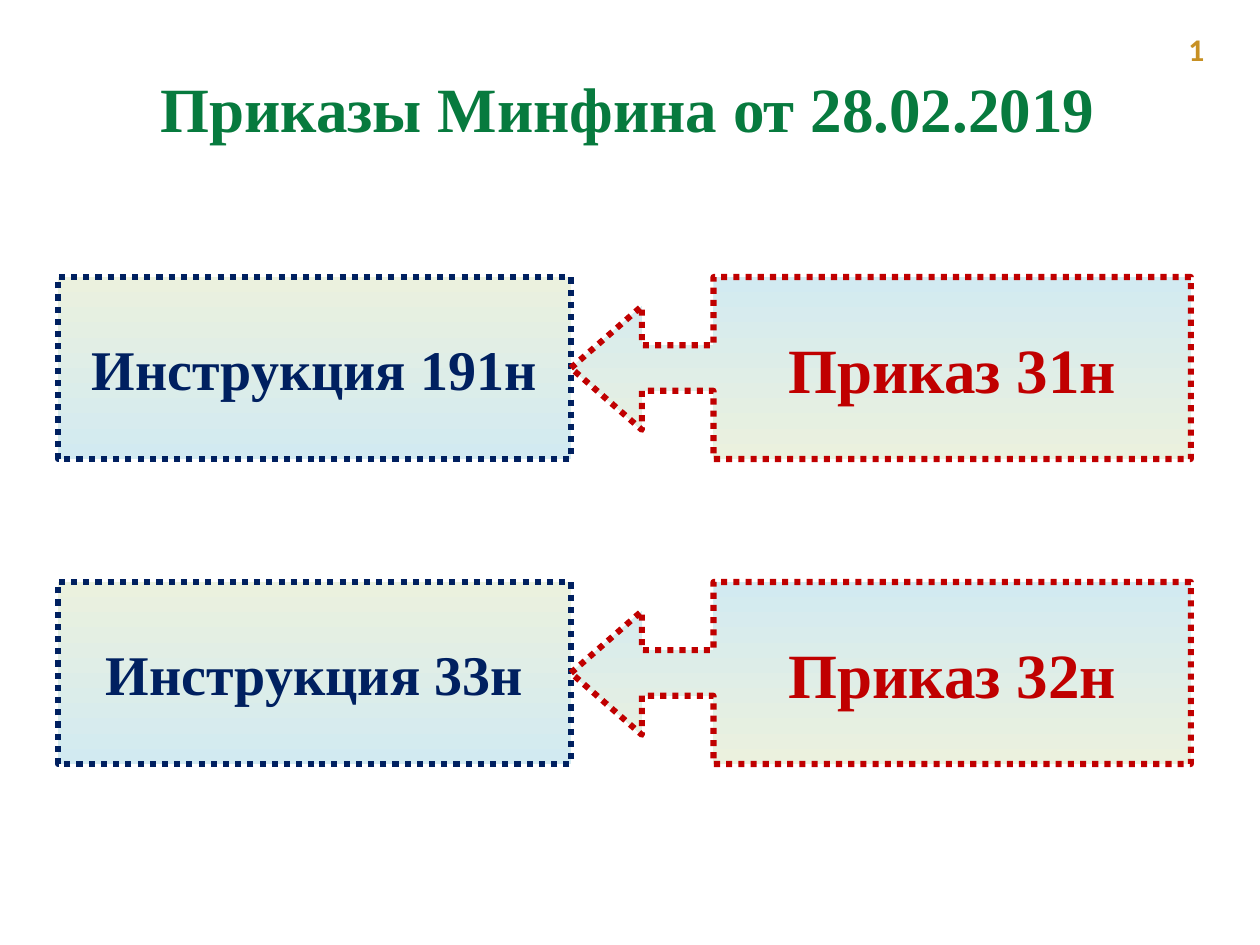
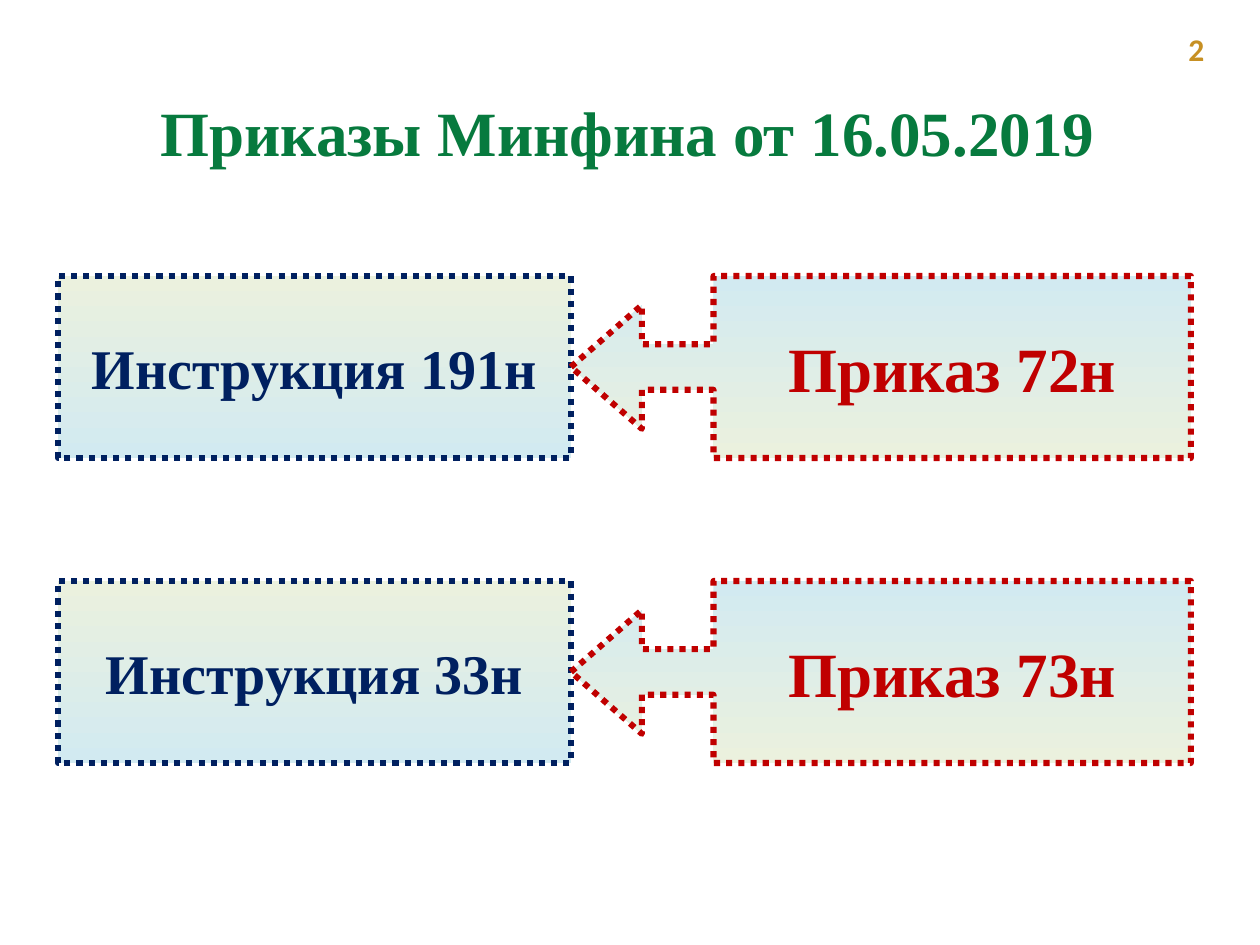
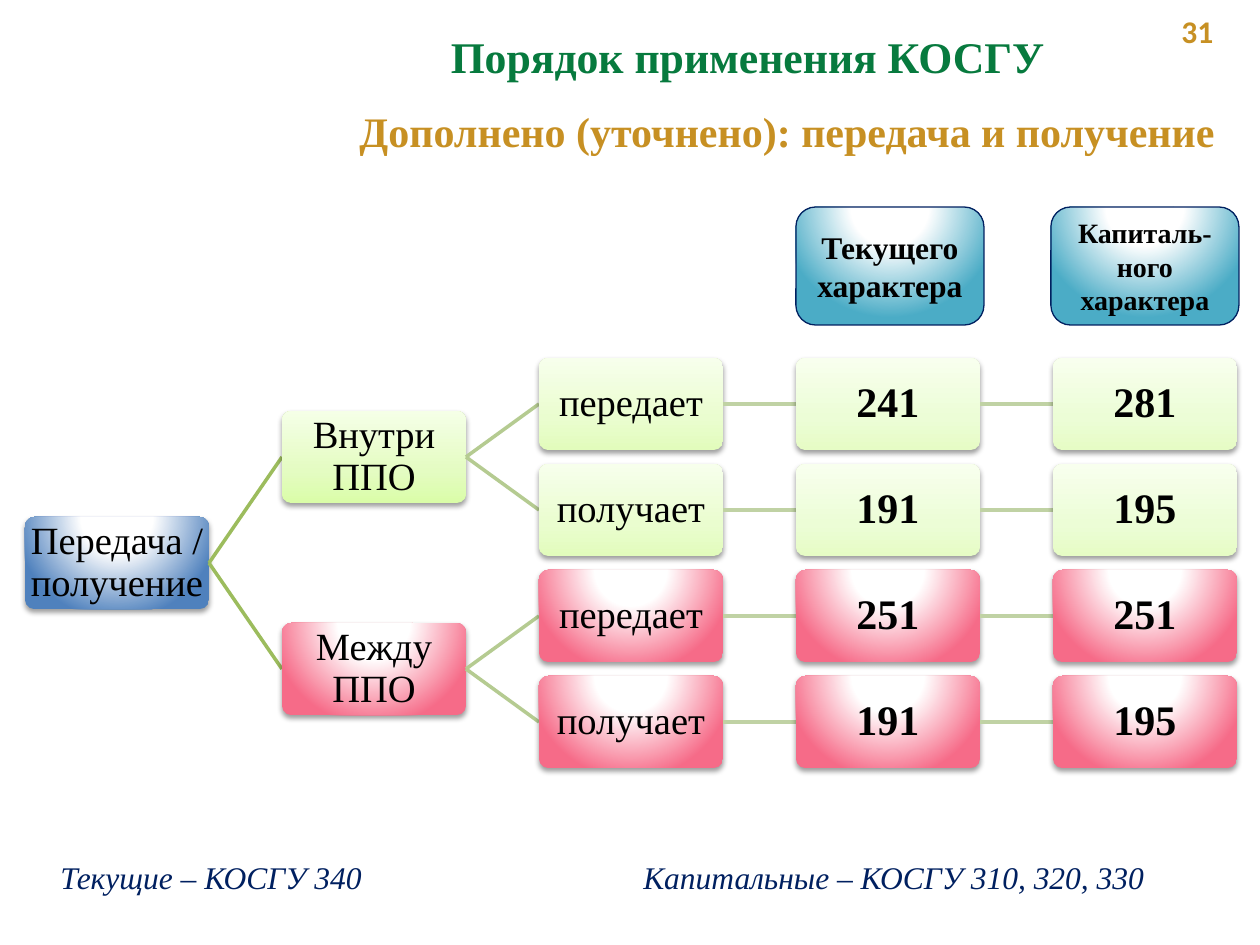
from pptx import Presentation
from pptx.dml.color import RGBColor
from pptx.enum.dml import MSO_LINE
from pptx.enum.shapes import MSO_CONNECTOR, MSO_SHAPE
from pptx.enum.text import MSO_ANCHOR, PP_ALIGN
from pptx.oxml import parse_xml
from pptx.oxml.ns import nsdecls, qn
from pptx.util import Inches, Pt

PX = 914400 // 126
rgb = RGBColor.from_string

GREEN, GOLD, NAVY, RED, BLACK = "077A3E", "C79023", "002060", "C00000", "000000"
SERIF = {"name": "Times New Roman", "bold": True}
PLAIN = {"name": "Times New Roman"}
ITALIC = {"name": "Times New Roman", "italic": True}
NUMBER = {"name": "Calibri", "bold": True}
CENTER, LEFT = PP_ALIGN.CENTER, PP_ALIGN.LEFT
MIDDLE, TOP = MSO_ANCHOR.MIDDLE, MSO_ANCHOR.TOP
PALE = ("D2EAF1", "EBF1DE")


def put_text(s, box, text, size, color, font, align=CENTER, anchor=MIDDLE, preset=None):
    """Add a text box, or a preset shape, holding one paragraph."""
    box = [v * PX for v in box]
    sp = s.shapes.add_shape(preset, *box) if preset else s.shapes.add_textbox(*box)
    tf = sp.text_frame
    tf.word_wrap = True
    tf.vertical_anchor = anchor
    p = tf.paragraphs[0]
    p.alignment = align
    r = p.add_run()
    r.text = text
    for key, value in {**font, "size": Pt(size)}.items():
        setattr(r.font, key, value)
    r.font.color.rgb = rgb(color)
    return sp


def set_gradient(sp, colors, angle=None):
    """Fill with a linear gradient, or a glow from above when there is no angle."""
    sp.shadow.inherit = False
    sp.fill.gradient()
    old = sp._element.spPr.find(qn("a:gradFill"))
    places = (0, 100) if len(colors) == 2 else (0, 35, 100)
    stops = "".join(f'<a:gs pos="{at * 1000}"><a:srgbClr val="{c}"/></a:gs>'
                    for at, c in zip(places, colors))
    if angle is None:
        way = ('<a:path path="circle"><a:fillToRect l="50000" t="-80000" '
               'r="50000" b="180000"/></a:path>')
    else:
        way = f'<a:lin ang="{angle * 60000}" scaled="0"/>'
    new = parse_xml(f'<a:gradFill {nsdecls("a")} rotWithShape="1">'
                    f'<a:gsLst>{stops}</a:gsLst>{way}</a:gradFill>')
    old.getparent().replace(old, new)


prs = Presentation()
prs.slide_width, prs.slide_height = Inches(10), Inches(7.5)
blank = prs.slide_layouts[6]

# Slides 1 and 2: orders that change instructions
order_slides = [
    ("1", "Приказы Минфина от 28.02.2019", 66, 277, ("Приказ 31н", "Приказ 32н")),
    ("2", "Приказы Минфина от 16.05.2019", 90, 276, ("Приказ 72н", "Приказ 73н")),
]
instructions = ("Инструкция 191н", "Инструкция 33н")
for number, title, title_y, top, orders in order_slides:
    s = prs.slides.add_slide(blank)
    put_text(s, (1176, 24, 74, 50), number, 18, GOLD, NUMBER, LEFT, TOP)
    for row, (instruction, order) in enumerate(zip(instructions, orders)):
        y = top + 305 * row
        target = put_text(s, (58, y, 513, 182), instruction, 32, NAVY, SERIF,
                          preset=MSO_SHAPE.RECTANGLE)
        callout = put_text(s, (571, y, 620, 182), order, 36, RED, SERIF,
                           preset=MSO_SHAPE.LEFT_ARROW_CALLOUT)
        for i, value in enumerate((0.25, 0.34, 0.39, 0.77)):
            callout.adjustments[i] = value
        for sp, color, angle in ((target, NAVY, 270), (callout, RED, 90)):
            set_gradient(sp, PALE, angle)
            sp.line.color.rgb = rgb(color)
            sp.line.width = Pt(3.5)
            sp.line.dash_style = MSO_LINE.ROUND_DOT
    put_text(s, (111, title_y, 1033, 83), title, 36, GREEN, SERIF)

# Slide 3: tree of transfers
s = prs.slides.add_slide(blank)
put_text(s, (1169, 6, 69, 50), "31", 18, GOLD, NUMBER, LEFT, TOP)
put_text(s, (370, 24, 755, 66), "Порядок применения КОСГУ", 25, GREEN, SERIF, anchor=TOP)
put_text(s, (336, 78, 902, 106), "Дополнено (уточнено): передача и получение",
         24, GOLD, SERIF)

NODE_W, NODE_H, COL_STEP, ROW_STEP = 184, 92, 257, 106
link_colors = ("9CBC5D", "B5CB91", "C0D2A4", "C0D2A4")
lime = {1: ("DAFDA8", "E4FCC2", "F5FFE7"), 2: ("E2FCBC", "EAFDCF", "F7FFEC")}
last_lime = ("E6FCC5", "ECFDD6", "F8FFEE")
blue, pink, teal = [("FFFFFF", "FFFFFF", c) for c in ("4F81BD", "F66B88", "4BACC6")]

# column, row, row of the parent, text
nodes = [(0, 1.5, None, "Передача / получение"),
         (1, 0.5, 1.5, "Внутри ППО"), (1, 2.5, 1.5, "Между ППО")]
leaves = [("передает", "241", "281"), ("получает", "191", "195"),
          ("передает", "251", "251"), ("получает", "191", "195")]
for row, texts in enumerate(leaves):
    parents = (0.5 if row < 2 else 2.5, row, row)
    nodes += [(col, row, parent, text)
              for col, (parent, text) in enumerate(zip(parents, texts), 2)]

for col, row, parent, text in nodes:
    x, y = 25 + COL_STEP * col, 358 + int(ROW_STEP * row)
    if parent is not None:
        mid = NODE_H // 2
        parent_y = 358 + int(ROW_STEP * parent)
        ends = (x - COL_STEP + NODE_W, parent_y + mid, x, y + mid)
        link = s.shapes.add_connector(MSO_CONNECTOR.STRAIGHT, *[v * PX for v in ends])
        link.line.color.rgb = rgb(link_colors[col - 1])
        link.line.width = Pt(2)
        link._element.spPr.append(parse_xml(f'<a:effectLst {nsdecls("a")}/>'))
    size, font = (24, SERIF) if col > 2 else (22, PLAIN)
    sp = put_text(s, (x, y, NODE_W, NODE_H), text, size, BLACK, font,
                  preset=MSO_SHAPE.ROUNDED_RECTANGLE)
    sp.adjustments[0] = 0.1
    sp.line.fill.background()
    for side in ("left", "right", "top", "bottom"):
        setattr(sp.text_frame, f"margin_{side}", 2 * PX)
    sp.text_frame.paragraphs[0].line_spacing = 0.9
    if col == 0:
        set_gradient(sp, blue)
    elif row < 2:
        set_gradient(sp, lime.get(col, last_lime), 270)
    else:
        set_gradient(sp, pink)
    sp._element.spPr.find(qn("a:effectLst")).append(parse_xml(
        f'<a:outerShdw {nsdecls("a")} blurRad="40000" dist="20000" dir="5400000" '
        'rotWithShape="0"><a:srgbClr val="000000"><a:alpha val="38000"/>'
        '</a:srgbClr></a:outerShdw>'))

for x, text, size in ((796, "Текущего характера", 18), (1051, "Капиталь-ного характера", 16)):
    sp = put_text(s, (x, 207, 188, 118), text, size, BLACK, SERIF,
                  preset=MSO_SHAPE.ROUNDED_RECTANGLE)
    set_gradient(sp, teal)
    sp.line.color.rgb = rgb(NAVY)
    sp.line.width = Pt(0.75)

for x, w, text in ((48, 379, "Текущие – КОСГУ 340"),
                   (631, 607, "Капитальные – КОСГУ 310, 320, 330")):
    put_text(s, (x, 852, w, 50), text, 18, NAVY, ITALIC, LEFT)

prs.save("out.pptx")
